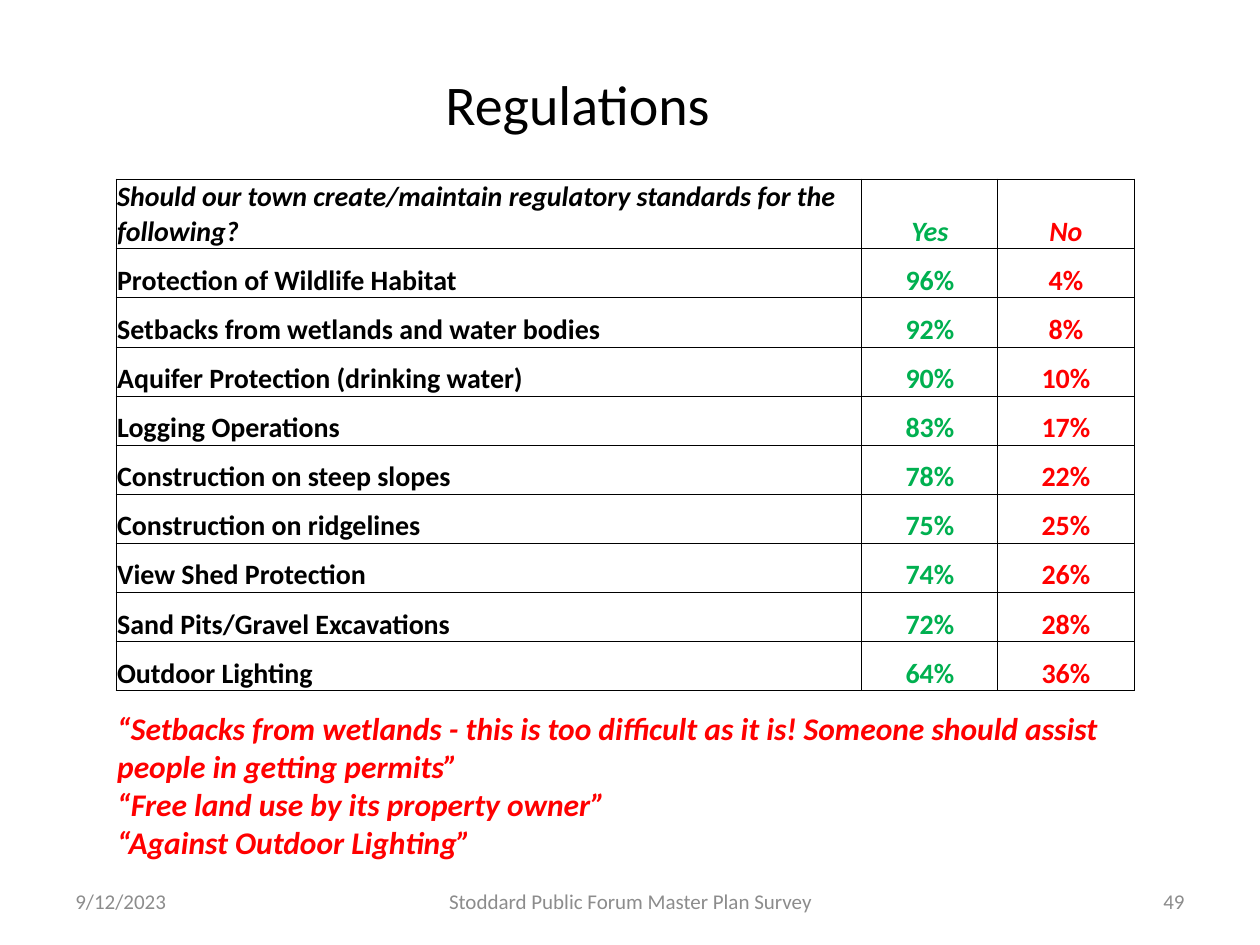
from dataclasses import dataclass

from lxml import etree
from pptx import Presentation
from pptx.dml.color import RGBColor
from pptx.enum.text import MSO_ANCHOR, MSO_AUTO_SIZE, PP_ALIGN
from pptx.oxml.ns import qn
from pptx.util import Inches, Pt

LEFT, CENTER, RIGHT = PP_ALIGN.LEFT, PP_ALIGN.CENTER, PP_ALIGN.RIGHT
MIDDLE, TOP, BOTTOM = MSO_ANCHOR.MIDDLE, MSO_ANCHOR.TOP, MSO_ANCHOR.BOTTOM
NO_AUTOFIT = MSO_AUTO_SIZE.NONE
FONT = "Calibri"
COLORS = {
    "text": "000000",
    "yes": "00B050",
    "no": "FF0000",
    "footer": "8C8C8C",
    "background": "FFFFFF",
}


@dataclass
class FooterItem:
    text: str
    left: float
    width: float
    align: PP_ALIGN


@dataclass
class SurveyRow:
    topic: str
    yes: str
    no: str


FOOTER = [
    FooterItem("9/12/2023", 0.5, 2.33, LEFT),
    FooterItem("Stoddard Public Forum Master Plan Survey", 3.42, 3.17, CENTER),
    FooterItem("49", 7.17, 2.33, RIGHT),
]
HEADER = SurveyRow(
    "Should our town create/maintain regulatory standards for the following?",
    "Yes", "No")
RESULTS = [
    SurveyRow("Protection of Wildlife Habitat", "96%", "4%"),
    SurveyRow("Setbacks from wetlands and water bodies", "92%", "8%"),
    SurveyRow("Aquifer Protection (drinking water)", "90%", "10%"),
    SurveyRow("Logging Operations", "83%", "17%"),
    SurveyRow("Construction on steep slopes", "78%", "22%"),
    SurveyRow("Construction on ridgelines", "75%", "25%"),
    SurveyRow("View Shed Protection", "74%", "26%"),
    SurveyRow("Sand Pits/Gravel Excavations", "72%", "28%"),
    SurveyRow("Outdoor Lighting", "64%", "36%"),
]
QUOTES = [
    "“Setbacks from wetlands - this is too difficult as it is! "
    "Someone should assist people in getting permits”",
    "“Free land use by its property owner”",
    "“Against Outdoor Lighting”",
]


def format_paragraph(p, size: float, color: str, align: PP_ALIGN = LEFT,
                     bold: bool = False, italic: bool = False) -> None:
    p.alignment = align
    p.font.name, p.font.size = FONT, Pt(size)
    p.font.bold, p.font.italic = bold, italic
    p.font.color.rgb = RGBColor.from_string(COLORS[color])


def place(sp, left: float, top: float, width: float, height: float) -> None:
    sp.left, sp.top = Inches(left), Inches(top)
    sp.width, sp.height = Inches(width), Inches(height)


def add_footer_item(slide, item: FooterItem) -> None:
    sp = slide.shapes.add_textbox(Inches(item.left), Inches(6.95),
                                  Inches(item.width), Inches(0.4))
    tf = sp.text_frame
    tf.word_wrap = True
    tf.vertical_anchor = MIDDLE
    tf.text = item.text
    format_paragraph(tf.paragraphs[0], 12, "footer", item.align)


def add_borders(cell) -> None:
    tc_pr = cell._tc.get_or_add_tcPr()
    for i, side in enumerate(("lnL", "lnR", "lnT", "lnB")):
        ln = etree.Element(qn(f"a:{side}"), w=str(Pt(0.5)))
        fill = etree.SubElement(ln, qn("a:solidFill"))
        etree.SubElement(fill, qn("a:srgbClr"), val=COLORS["text"])
        tc_pr.insert(i, ln)


def fill_cell(cell, text: str, color: str, align: PP_ALIGN, italic: bool) -> None:
    cell.text = text
    cell.vertical_anchor = BOTTOM
    cell.margin_left = cell.margin_right = cell.margin_top = Inches(0.01)
    cell.margin_bottom = 0
    cell.fill.solid()
    cell.fill.fore_color.rgb = RGBColor.from_string(COLORS["background"])
    format_paragraph(cell.text_frame.paragraphs[0], 16, color, align, True, italic)
    add_borders(cell)


def add_survey_table(slide, rows: list[SurveyRow]) -> None:
    row_height = 0.39
    table = slide.shapes.add_table(len(rows), 3, Inches(0.92), Inches(1.42),
                                   Inches(8.08), Inches(row_height * len(rows))).table
    table.first_row = table.horz_banding = False
    for column, width in zip(table.columns, (5.92, 1.08, 1.08)):
        column.width = Inches(width)
    for i, row in enumerate(rows):
        table.rows[i].height = Inches(row_height)
        italic = row is HEADER
        fill_cell(table.cell(i, 0), row.topic, "text", LEFT, italic)
        fill_cell(table.cell(i, 1), row.yes, "yes", CENTER, italic)
        fill_cell(table.cell(i, 2), row.no, "no", CENTER, italic)


def set_title(sp) -> None:
    place(sp, 3.42, 0.5, 2.33, 0.64)
    tf = sp.text_frame
    tf.text = "Regulations"
    tf.word_wrap = False
    tf.auto_size = NO_AUTOFIT
    tf.vertical_anchor = TOP
    format_paragraph(tf.paragraphs[0], 32, "text", CENTER)


def set_quotes(sp) -> None:
    place(sp, 0.83, 5.58, 8.08, 1.62)
    tf = sp.text_frame
    tf.text = "\n".join(QUOTES)
    tf.word_wrap = True
    tf.auto_size = NO_AUTOFIT
    tf.vertical_anchor = TOP
    for p in tf.paragraphs:
        p_pr = p._p.get_or_add_pPr()
        p_pr.set("marL", "0")
        p_pr.set("indent", "0")
        etree.SubElement(p_pr, qn("a:buNone"))
        p.space_before = Pt(0)
        format_paragraph(p, 18, "no", bold=True, italic=True)


def main() -> None:
    prs = Presentation()
    prs.slide_width, prs.slide_height = Inches(10), Inches(7.5)
    slide = prs.slides.add_slide(prs.slide_layouts[1])
    set_title(slide.shapes.title)
    set_quotes(slide.placeholders[1])
    add_survey_table(slide, [HEADER, *RESULTS])
    for item in FOOTER:
        add_footer_item(slide, item)
    prs.save("out.pptx")


if __name__ == "__main__":
    main()
